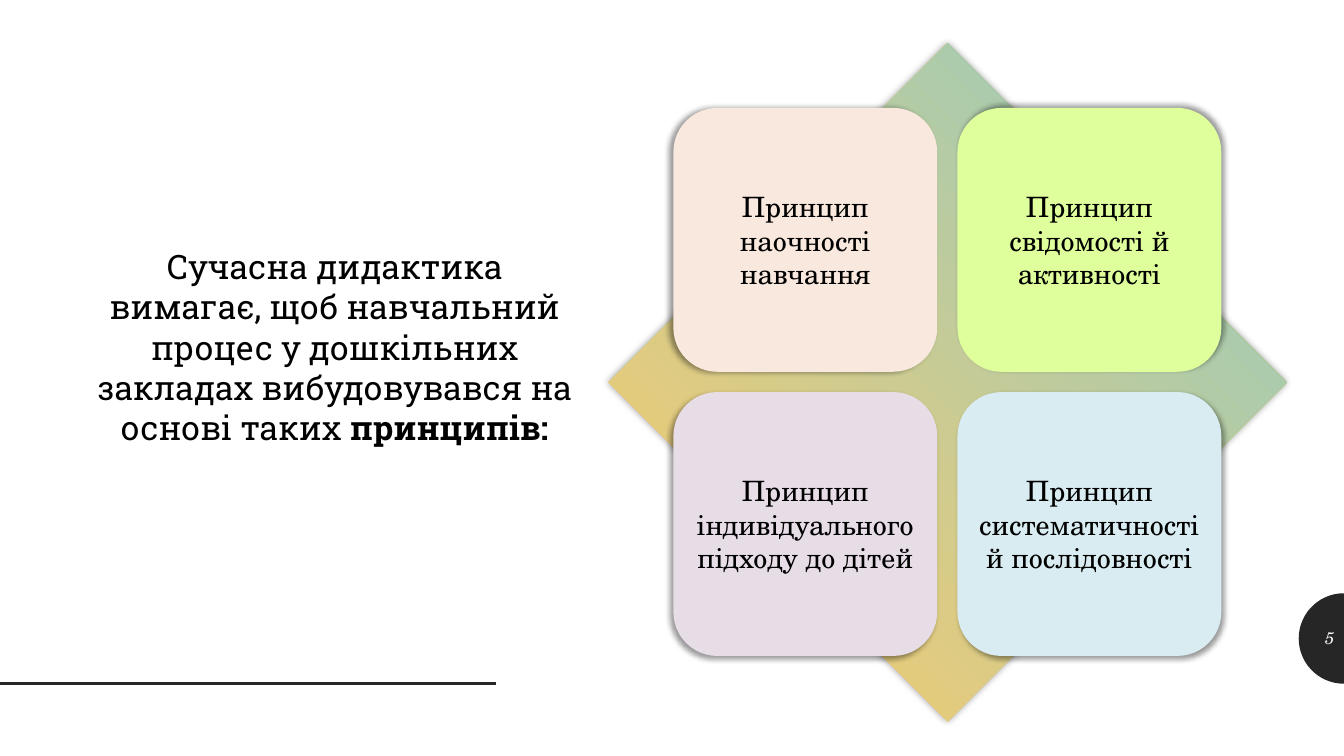
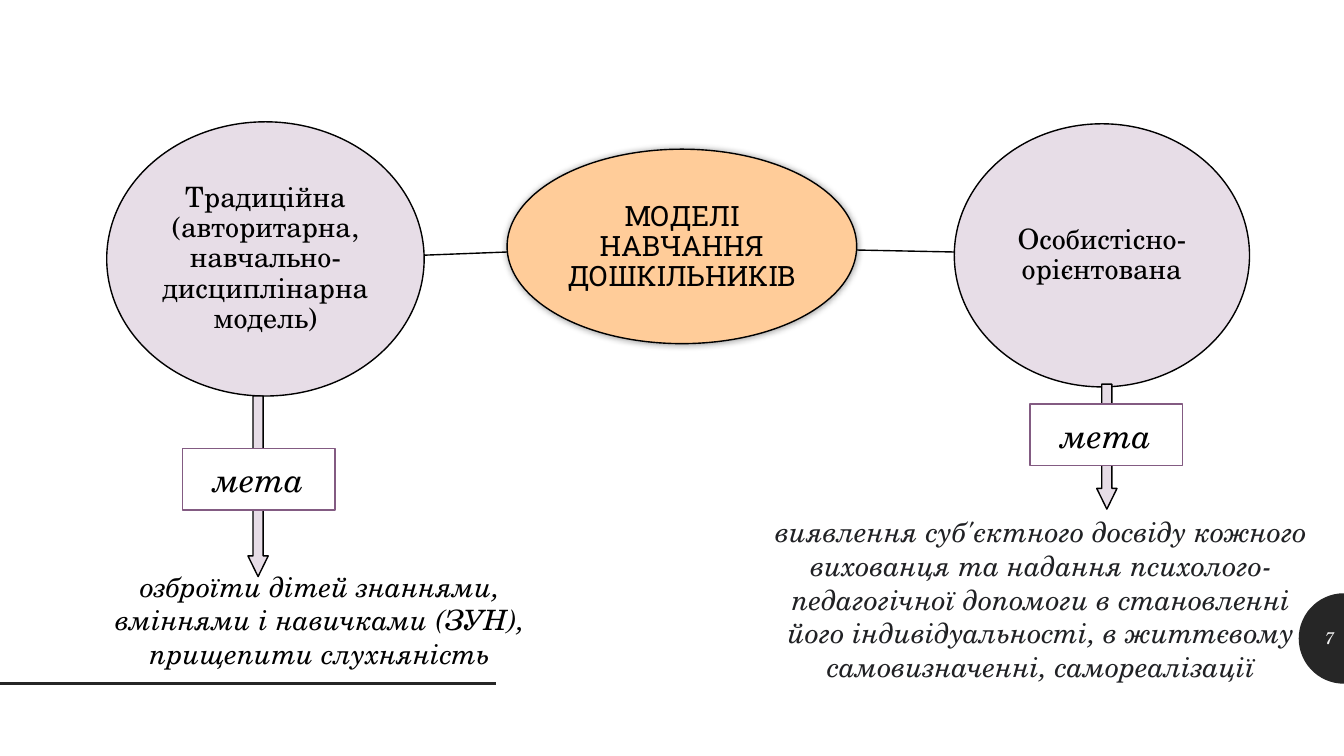
"""Build two slides on teaching principles and learning models for preschoolers."""
import math

from lxml import etree
from pptx import Presentation
from pptx.dml.color import RGBColor
from pptx.enum import shapes, text
from pptx.oxml import ns
from pptx.util import Cm, Pt

SERIF, SLAB = "TeX Gyre Schola", "Roboto Slab"
BLACK, DARK, LILAC = "000000", "262626", "E7DDE7"
color = RGBColor.from_string


def paint(shape, fill=None, line=None, width=1, shadow=None):
    """Set fill, outline and an optional (blur, distance, angle) shadow."""
    if fill:
        shape.fill.solid()
        shape.fill.fore_color.rgb = color(fill)
    if line:
        shape.line.color.rgb = color(line)
        shape.line.width = Pt(width)
    else:
        shape.line.fill.background()
    effects = etree.SubElement(shape._element.spPr, ns.qn("a:effectLst"))
    if shadow:
        blur, distance, angle = shadow
        outer = etree.SubElement(effects, ns.qn("a:outerShdw"), blurRad=str(Pt(blur)), dist=str(Pt(distance)),
                                 dir=str(angle * 60000), algn="ctr", rotWithShape="0")
        tone = etree.SubElement(outer, ns.qn("a:srgbClr"), val=BLACK)
        etree.SubElement(tone, ns.qn("a:alpha"), val="40000")


def write(shape, words, size, font=SERIF, ink=BLACK, italic=False, align="CENTER",
          anchor="MIDDLE", margin=None, spacing=None):
    """Put one formatted paragraph into a shape and return it."""
    frame = shape.text_frame
    frame.word_wrap = True
    frame.auto_size = text.MSO_AUTO_SIZE.NONE
    frame.vertical_anchor = text.MSO_ANCHOR[anchor]
    if margin is not None:
        frame.margin_left = frame.margin_right = frame.margin_top = frame.margin_bottom = Cm(margin)
    para = frame.paragraphs[0]
    para.add_run().text = words
    para.alignment = text.PP_ALIGN[align]
    para.line_spacing = spacing
    para.font.name = font
    para.font.size = Pt(size)
    para.font.italic = italic
    para.font.color.rgb = color(ink)
    return para


deck = Presentation()
deck.slide_width, deck.slide_height = Cm(33.87), Cm(19.05)
layout = deck.slide_layouts[5]
principles = deck.slides.add_slide(layout)
models = deck.slides.add_slide(layout)

arc = [math.radians(90 + 6 * step) for step in range(31)]
points = [(Cm(33.87 + 1.14 * math.cos(angle)), Cm(16.09 + 1.14 * math.sin(angle))) for angle in arc]
outline = principles.shapes.build_freeform(*points[0], scale=1.0)
outline.add_line_segments(points[1:], close=True)
disk = outline.convert_to_shape()
paint(disk, DARK)
rule = principles.shapes.add_connector(shapes.MSO_CONNECTOR.STRAIGHT, 0, Cm(17.22), Cm(12.5), Cm(17.22))
paint(rule, line=DARK, width=2)
for identifier, mark in enumerate((disk, rule), 20):
    mark._element.xpath(".//p:cNvPr")[0].set("id", str(identifier))
    layout.shapes._spTree.append(mark._element)

for page, number in ((principles, "5"), (models, "7")):
    box = page.shapes.add_textbox(Cm(32.74), Cm(15.57), Cm(1.14), Cm(1.02))
    write(box, number, 12, ink="F5F5F5", italic=True, align="RIGHT")

title = principles.shapes.title
title.left, title.top, title.width, title.height = Cm(2.11), Cm(6.07), Cm(12.65), Cm(5.38)
para = write(title, "Сучасна дидактика вимагає, щоб навчальний процес у дошкільних закладах "
             "вибудовувався на основі таких ", 24, SLAB, anchor="TOP")
span = para.add_run()
span.text = "принципів:"
span.font.bold = True

diamond = principles.shapes.add_shape(shapes.MSO_SHAPE.DIAMOND, Cm(15.34), Cm(1.09), Cm(17.09), Cm(17.09))
diamond.fill.gradient()
diamond.fill.gradient_angle = 45
for stop, (position, tone) in zip(diamond.fill.gradient_stops, ((0, "FFCC66"), (1, "90CAC4"))):
    stop.position = position
    stop.color.rgb = color(tone)
paint(diamond, shadow=(5, 0, 0))

cards = [
    ("Принцип наочності навчання", "F9E8DD", 180),
    ("Принцип свідомості й активності", "DEFF9B", 315),
    ("Принцип індивідуального підходу до дітей", LILAC, 135),
    ("Принцип систематичності й послідовності", "D9ECF1", 45),
]
for index, (words, fill, angle) in enumerate(cards):
    row, column = divmod(index, 2)
    card = principles.shapes.add_shape(shapes.MSO_SHAPE.ROUNDED_RECTANGLE, Cm(16.97 + 7.16 * column),
                                       Cm(2.72 + 7.16 * row), Cm(6.65), Cm(6.65))
    paint(card, fill, shadow=(4, 3, angle))
    write(card, words, 20, margin=0.15)

center = models.shapes.add_shape(shapes.MSO_SHAPE.OVAL, Cm(12.78), Cm(3.76), Cm(8.81), Cm(4.9))
paint(center, "FFCC99", BLACK, shadow=(5, 0, 0))
title = models.shapes.title
title.left, title.top, title.width, title.height = Cm(14.07), Cm(4.5), Cm(6.22), Cm(3.48)
write(title, "МОДЕЛІ НАВЧАННЯ ДОШКІЛЬНИКІВ", 20, SLAB, margin=0.03, spacing=0.9)
models.shapes._spTree.append(title._element)

for start_x, start_y, end_x, end_y in ((12.78, 6.35, 10.69, 6.43), (21.59, 6.3, 24.05, 6.35)):
    link = models.shapes.add_connector(shapes.MSO_CONNECTOR.STRAIGHT, Cm(start_x), Cm(start_y), Cm(end_x), Cm(end_y))
    paint(link, line=BLACK)

branches = [
    ("Традиційна (авторитарна, навчально-дисциплінарна модель)", (2.69, 3.07, 8, 6.91),
     (6.25, 9.98, 0.51, 4.55), (4.6, 11.3, 3.84, 1.55),
     "озброїти дітей знаннями, вміннями і навичками (ЗУН), прищепити слухняність",
     (2.21, 14.22, 11.71, 2.82), BLACK),
    ("Особистісно-орієнтована", (24.05, 3.12, 7.44, 6.63),
     (27.64, 9.68, 0.51, 3.15), (25.96, 10.18, 3.84, 1.55),
     "виявлення суб'єктного досвіду кожного вихованця та надання психолого-педагогічної допомоги "
     "в становленні його індивідуальності, в життєвому самовизначенні, самореалізації",
     (19.18, 12.85, 14.12, 4.52), "202124"),
]
for model, oval_at, arrow_at, label_at, goal, goal_at, ink in branches:
    oval = models.shapes.add_shape(shapes.MSO_SHAPE.OVAL, *map(Cm, oval_at))
    paint(oval, LILAC, BLACK)
    write(oval, model, 20, margin=0.03, spacing=0.9)
    arrow = models.shapes.add_shape(shapes.MSO_SHAPE.DOWN_ARROW, *map(Cm, arrow_at))
    arrow.adjustments[1] = 1.02
    paint(arrow, LILAC, BLACK)
    label = models.shapes.add_shape(shapes.MSO_SHAPE.RECTANGLE, *map(Cm, label_at))
    paint(label, "FFFFFF", "835B82")
    write(label, "мета", 24, italic=True)
    box = models.shapes.add_textbox(*map(Cm, goal_at))
    write(box, goal, 20, ink=ink, italic=True, anchor="TOP")

deck.save("out.pptx")
